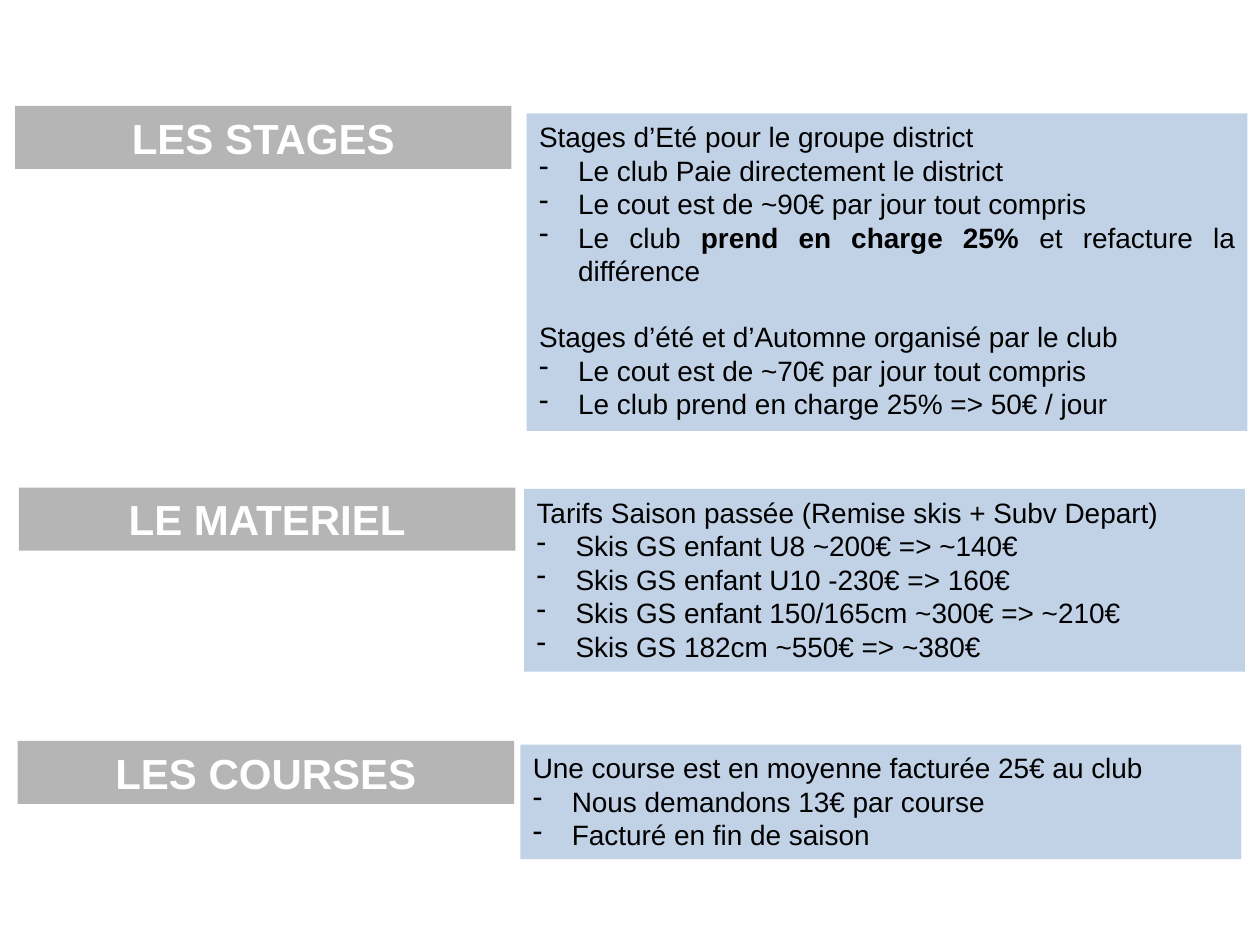
import pptx
import pptx.dml.color
import pptx.enum.shapes
import pptx.enum.text
import pptx.oxml
import pptx.oxml.ns
import pptx.util
from lxml import etree
from pptx.util import Inches

COLORS = {"heading": "808080", "details": "95B3D7", "light": "FFFFFF", "dark": "000000"}
ALIGN = pptx.enum.text.PP_ALIGN
QN = pptx.oxml.ns.qn


class ClubSlide:
    """Style and drawing methods for the club rates slide."""

    font_name = "Arial"
    opacity = 58
    heading_size = (3.94, 0.5)
    details_width = 5.72
    indent = 0.31
    group_gap = 18.4

    def __init__(self, slide):
        self.slide = slide

    def panel(self, left, top, width, height, color):
        panel = self.slide.shapes.add_shape(
            pptx.enum.shapes.MSO_SHAPE.RECTANGLE,
            Inches(left), Inches(top), Inches(width), Inches(height))
        panel.shadow.inherit = False
        panel.line.fill.background()
        panel.fill.solid()
        panel.fill.fore_color.rgb = pptx.dml.color.RGBColor.from_string(COLORS[color])
        fill_color = panel.fill._xPr.find(f".//{QN('a:srgbClr')}")
        etree.SubElement(fill_color, QN("a:alpha"), val=str(self.opacity * 1000))
        frame = panel.text_frame
        frame.word_wrap = True
        frame.auto_size = pptx.enum.text.MSO_AUTO_SIZE.SHAPE_TO_FIT_TEXT
        frame.vertical_anchor = pptx.enum.text.MSO_ANCHOR.TOP
        return frame

    def style(self, paragraph, size, color, align, bold=None):
        paragraph.alignment = align
        font = paragraph.font
        font.name = self.font_name
        font.size = pptx.util.Pt(size)
        font.bold = bold
        font.color.rgb = pptx.dml.color.RGBColor.from_string(COLORS[color])

    def heading(self, left, top, title):
        paragraph = self.panel(left, top, *self.heading_size, "heading").paragraphs[0]
        paragraph.add_run().text = title
        self.style(paragraph, 24, "light", ALIGN.CENTER, True)

    def bullet(self, paragraph):
        properties = paragraph._p.get_or_add_pPr()
        properties.set("marL", str(Inches(self.indent)))
        properties.set("indent", str(-Inches(self.indent)))
        etree.SubElement(properties, QN("a:buFontTx"))
        etree.SubElement(properties, QN("a:buChar"), char="-")

    def details(self, left, top, height, groups):
        frame = self.panel(left, top, self.details_width, height, "details")
        paragraph = frame.paragraphs[0]
        for group_index, (intro, items) in enumerate(groups):
            for item_index, text in enumerate([intro, *items]):
                if group_index or item_index:
                    paragraph = frame.add_paragraph()
                if item_index:
                    self.bullet(paragraph)
                elif group_index:
                    paragraph.space_before = pptx.util.Pt(self.group_gap)
                for part_index, part in enumerate(text.split("**")):
                    run = paragraph.add_run()
                    run.text = part
                    if part_index % 2:
                        run.font.bold = True
                self.style(paragraph, 16, "dark", ALIGN.JUSTIFY)


SECTIONS = [
    ("LE MATERIEL", (0.15, 3.87), (4.16, 3.88, 1.45), [
        ("Tarifs Saison passée (Remise skis + Subv Depart)", [
            "Skis GS enfant U8 ~200€ => ~140€",
            "Skis GS enfant U10 -230€ => 160€",
            "Skis GS enfant 150/165cm ~300€ => ~210€",
            "Skis GS 182cm ~550€ => ~380€"])]),
    ("LES COURSES", (0.14, 5.88), (4.13, 5.91, 0.91), [
        ("Une course est en moyenne facturée 25€ au club", [
            "Nous demandons 13€ par course",
            "Facturé en fin de saison"])]),
    ("LES STAGES", (0.12, 0.84), (4.18, 0.9, 2.52), [
        ("Stages d’Eté pour le groupe district", [
            "Le club Paie directement le district",
            "Le cout est de ~90€ par jour tout compris",
            "Le club **prend en charge 25% **et refacture la différence"]),
        ("Stages d’été et d’Automne organisé par le club", [
            "Le cout est de ~70€ par jour tout compris",
            "Le club prend en charge 25% => 50€ / jour"])]),
]


def main():
    presentation = pptx.Presentation()
    presentation.slide_width = Inches(10)
    presentation.slide_height = Inches(7.5)
    rates = ClubSlide(presentation.slides.add_slide(presentation.slide_layouts[6]))
    for title, heading_at, details_at, groups in SECTIONS:
        rates.heading(*heading_at, title)
        rates.details(*details_at, groups)
    presentation.save("out.pptx")


if __name__ == "__main__":
    main()
